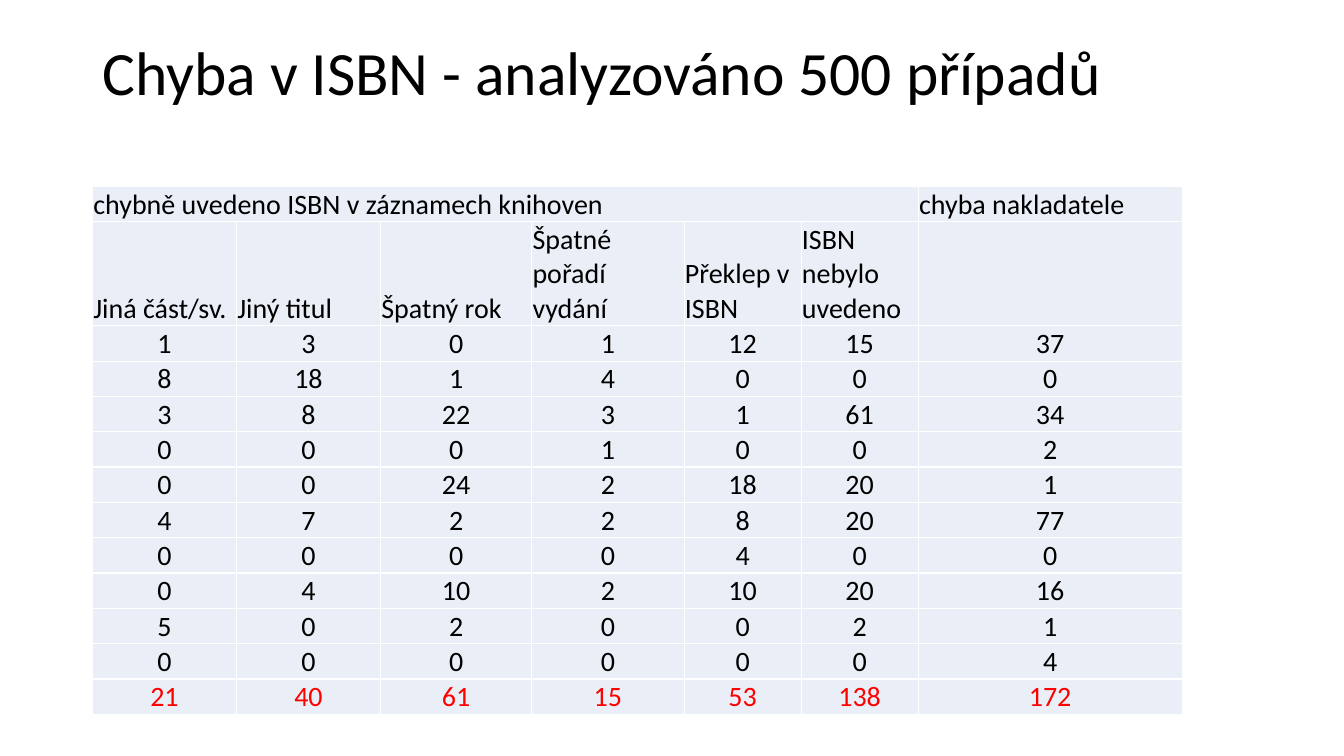
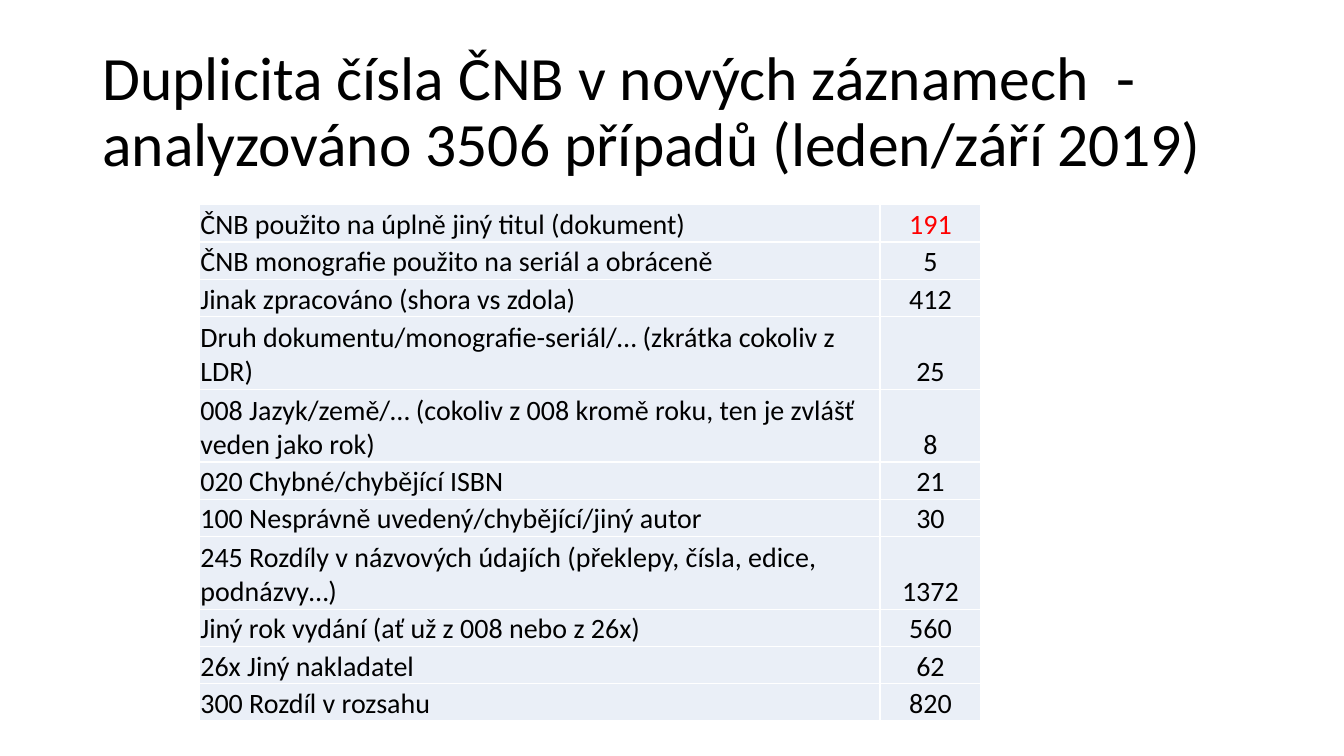
from lxml import etree
from pptx import Presentation
from pptx import util as u
from pptx.dml.color import RGBColor
from pptx.enum import text
from pptx.oxml import ns

# Shared look
FONT = "Calibri"
BLACK, RED, WHITE, PALE_BLUE = "000000", "FF0000", "FFFFFF", "EAEFF7"
TITLE_SIZE, CELL_SIZE = 44, 20
LEFT, TITLE_TOP, TITLE_WIDTH = 2.33, 1.02, 29.21
INSET = 0.02
LEFT_ALIGNED, CENTRED = text.PP_ALIGN.LEFT, text.PP_ALIGN.CENTER

# Slide 1: error counts, the last row holds the sums
GROUP_HEADERS = ["chybně uvedeno ISBN v záznamech knihoven",
                 "", "", "", "", "", "chyba nakladatele"]
ERROR_HEADERS = ["Jiná část/sv.", "Jiný titul", "Špatný rok", "Špatné pořadí vydání",
                 "Překlep v ISBN", "ISBN nebylo uvedeno", ""]
ERROR_COUNTS = [
    [1, 3, 0, 1, 12, 15, 37],
    [8, 18, 1, 4, 0, 0, 0],
    [3, 8, 22, 3, 1, 61, 34],
    [0, 0, 0, 1, 0, 0, 2],
    [0, 0, 24, 2, 18, 20, 1],
    [4, 7, 2, 2, 8, 20, 77],
    [0, 0, 0, 0, 4, 0, 0],
    [0, 4, 10, 2, 10, 20, 16],
    [5, 0, 2, 0, 0, 2, 1],
    [0, 0, 0, 0, 0, 0, 4],
    [21, 40, 61, 15, 53, 138, 172],
]
ERROR_WIDTHS = [3.63, 3.63, 3.81, 3.84, 2.95, 2.95, 6.65]
ERROR_ROW, ERROR_HEADER_ROW = 0.89, 2.62

# Slide 2: reason, count, lines of text in the row
DUPLICATES = [
    ("ČNB použito na úplně jiný titul (dokument)", 191, 1),
    ("ČNB monografie použito na seriál a obráceně", 5, 1),
    ("Jinak zpracováno (shora vs zdola)", 412, 1),
    ("Druh dokumentu/monografie-seriál/… (zkrátka cokoliv z LDR)", 25, 2),
    ("008 Jazyk/země/… (cokoliv z 008 kromě roku, ten je zvlášť veden jako rok)", 8, 2),
    ("020 Chybné/chybějící ISBN", 21, 1),
    ("100 Nesprávně uvedený/chybějící/jiný autor", 30, 1),
    ("245 Rozdíly v názvových údajích (překlepy, čísla, edice, podnázvy…)", 1372, 2),
    ("Jiný rok vydání (ať už z 008 nebo z 26x)", 560, 1),
    ("26x Jiný nakladatel", 62, 1),
    ("300 Rozdíl v rozsahu", 820, 1),
]
DUPLICATE_WIDTHS = [17.15, 2.54]
DUPLICATE_ROWS = {1: 0.94, 2: 1.83}


def colour(value):
    return RGBColor.from_string(value)


def add_span(para, words, size, ink=BLACK):
    span = para.add_run()
    span.text = words
    span.font.name = FONT
    span.font.size = u.Pt(size)
    span.font.color.rgb = colour(ink)


def add_title(page, words, height):
    box = page.shapes.add_textbox(u.Cm(LEFT), u.Cm(TITLE_TOP), u.Cm(TITLE_WIDTH), u.Cm(height))
    frame = box.text_frame
    frame.word_wrap = True
    frame.margin_top = frame.margin_bottom = 0
    frame.vertical_anchor = text.MSO_ANCHOR.MIDDLE
    para = frame.paragraphs[0]
    para.line_spacing = 0.9
    add_span(para, words, TITLE_SIZE)


def add_borders(cell):
    properties = cell._tc.get_or_add_tcPr()
    for side in ("a:lnL", "a:lnR", "a:lnT", "a:lnB"):
        line = etree.SubElement(properties, ns.qn(side), w=str(u.Pt(1)))
        fill = etree.SubElement(line, ns.qn("a:solidFill"))
        etree.SubElement(fill, ns.qn("a:srgbClr"), val=WHITE)


def fill_cell(cell, value, ink):
    """Numbers are centred, words start at the left."""
    add_borders(cell)
    cell.fill.solid()
    cell.fill.fore_color.rgb = colour(PALE_BLUE)
    cell.margin_left = cell.margin_right = cell.margin_top = u.Cm(INSET)
    cell.margin_bottom = 0
    cell.vertical_anchor = text.MSO_ANCHOR.BOTTOM
    para = cell.text_frame.paragraphs[0]
    para.alignment = CENTRED if isinstance(value, int) else LEFT_ALIGNED
    if value != "":
        add_span(para, str(value), CELL_SIZE, ink)


def add_grid(page, left, top, widths, heights, rows, red_row):
    """Draw a table in which the numbers of one row are red."""
    frame = page.shapes.add_table(len(rows), len(widths), u.Cm(left), u.Cm(top),
                                  u.Cm(sum(widths)), u.Cm(sum(heights)))
    table = frame.table
    table.first_row = table.horz_banding = False
    for column, width in zip(table.columns, widths):
        column.width = u.Cm(width)
    for number, (row, height, values) in enumerate(zip(table.rows, heights, rows)):
        row.height = u.Cm(height)
        for cell, value in zip(row.cells, values):
            is_red = number == red_row and isinstance(value, int)
            fill_cell(cell, value, RED if is_red else BLACK)
    return table


def add_error_page(deck, layout):
    page = deck.slides.add_slide(layout)
    add_title(page, "Chyba v ISBN - analyzováno 500 případů", 1.78)
    rows = [GROUP_HEADERS, ERROR_HEADERS] + ERROR_COUNTS
    heights = [ERROR_ROW, ERROR_HEADER_ROW] + [ERROR_ROW] * len(ERROR_COUNTS)
    table = add_grid(page, LEFT, 4.7, ERROR_WIDTHS, heights, rows, len(rows) - 1)
    table.cell(0, 0).merge(table.cell(0, 5))


def add_duplicate_page(deck, layout):
    page = deck.slides.add_slide(layout)
    add_title(page, "Duplicita čísla ČNB v nových záznamech  - "
                    "analyzováno 3506 případů (leden/září 2019)", 3.68)
    rows = [(reason, count) for reason, count, lines in DUPLICATES]
    heights = [DUPLICATE_ROWS[lines] for reason, count, lines in DUPLICATES]
    add_grid(page, 5.03, 5.16, DUPLICATE_WIDTHS, heights, rows, 0)


def main():
    deck = Presentation()
    deck.slide_width, deck.slide_height = u.Cm(33.87), u.Cm(19.05)
    blank = deck.slide_layouts[6]
    add_error_page(deck, blank)
    add_duplicate_page(deck, blank)
    deck.save("out.pptx")


if __name__ == "__main__":
    main()
